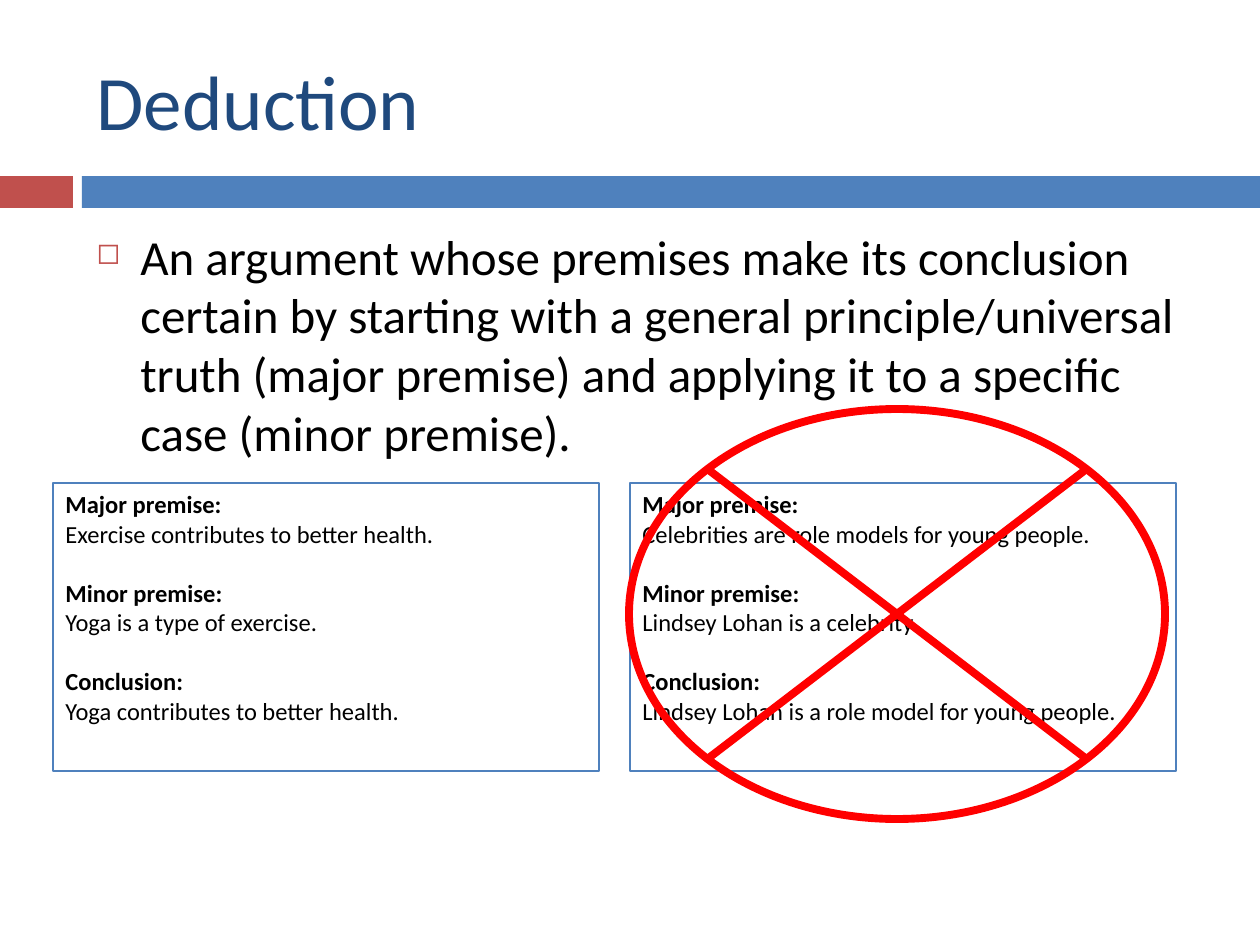
"""Build the slide on deduction with a sound and a rejected syllogism."""
from lxml import etree
from pptx import Presentation
from pptx import util as u
from pptx.dml.color import RGBColor
from pptx.enum import shapes, text
from pptx.oxml.ns import qn

EMU_PER_PX = 914400 / 126
FONT = "Calibri"
RED = RGBColor(0xC0, 0x50, 0x4D)
BLUE = RGBColor(0x4F, 0x81, 0xBD)
NAVY = RGBColor(0x1F, 0x49, 0x7D)
BLACK = RGBColor(0, 0, 0)
WHITE = RGBColor(0xFF, 0xFF, 0xFF)
ALERT = RGBColor(0xFF, 0, 0)

LABELS = ("Major premise:", "Minor premise:", "Conclusion:")
SYLLOGISMS = (
    ("Exercise contributes to better health.",
     "Yoga is a type of exercise.",
     "Yoga contributes to better health."),
    ("Celebrities are role models for young people.",
     "Lindsey Lohan is a celebrity.",
     "Lindsey Lohan is a role model for young people."),
)
DEFINITION = (
    "An argument whose premises make its conclusion certain by starting with "
    "a general principle/universal truth (major premise) and applying it to a "
    "specific case (minor premise)."
)


def px(length):
    return u.Emu(round(length * EMU_PER_PX))


def box(*lengths):
    return [px(length) for length in lengths]


def set_all(target, values):
    for name, value in values.items():
        setattr(target, name, value)


def write(paragraph, words, size, color, bold=False, **layout):
    run = paragraph.add_run()
    run.text = words
    set_all(run.font, {"name": FONT, "size": u.Pt(size), "bold": bold})
    run.font.color.rgb = color
    set_all(paragraph, {"alignment": text.PP_ALIGN.LEFT, **layout})


def add_shape(slide, kind, bounds, fill=None, line=None, width=1.5):
    shape = slide.shapes.add_shape(kind, *box(*bounds))
    shape.shadow.inherit = False
    if fill is None:
        shape.fill.background()
    else:
        shape.fill.solid()
        shape.fill.fore_color.rgb = fill
    if line is None:
        shape.line.fill.background()
    else:
        shape.line.color.rgb = line
        shape.line.width = u.Pt(width)
    return shape


def add_title(slide, words):
    title = slide.shapes.title
    set_all(title, dict(zip(("left", "top", "width", "height"), box(84, 32, 1124, 136))))
    set_all(title.text_frame, {"vertical_anchor": text.MSO_ANCHOR.MIDDLE, "word_wrap": True})
    write(title.text_frame.paragraphs[0], words, 44, NAVY)


def add_bullet(paragraph):
    properties = paragraph._p.get_or_add_pPr()
    indent = px(44)
    properties.set("marL", str(indent))
    properties.set("indent", str(-indent))
    color = etree.SubElement(properties, qn("a:buClr"))
    etree.SubElement(color, qn("a:srgbClr"), val=str(RED))
    etree.SubElement(properties, qn("a:buSzPct"), val="60000")
    etree.SubElement(properties, qn("a:buChar"), char="◻")


def add_definition(slide):
    frame = slide.shapes.add_textbox(*box(84, 220, 1124, 620)).text_frame
    frame.word_wrap = True
    paragraph = frame.paragraphs[0]
    write(paragraph, DEFINITION, 28, BLACK, space_before=u.Pt(7))
    add_bullet(paragraph)


def add_syllogism(slide, left, statements):
    shape = add_shape(slide, shapes.MSO_SHAPE.RECTANGLE, (left, 483, 546, 288), WHITE, BLUE)
    frame = shape.text_frame
    set_all(frame, {"vertical_anchor": text.MSO_ANCHOR.TOP, "word_wrap": True})
    for index, (label, statement) in enumerate(zip(LABELS, statements)):
        heading = frame.add_paragraph() if index else frame.paragraphs[0]
        write(heading, label, 14, BLACK, True, space_before=u.Pt(17 if index else 0))
        write(frame.add_paragraph(), statement, 14, BLACK)


def main():
    presentation = Presentation()
    set_all(presentation, {"slide_width": px(1260), "slide_height": px(945)})
    slide = presentation.slides.add_slide(presentation.slide_layouts[5])
    for left, width, color in ((0, 73, RED), (82, 1178, BLUE)):
        add_shape(slide, shapes.MSO_SHAPE.RECTANGLE, (left, 176, width, 32), color)
    add_title(slide, "Deduction")
    add_definition(slide)
    for left, statements in zip((53, 630), SYLLOGISMS):
        add_syllogism(slide, left, statements)
    add_shape(slide, shapes.MSO_SHAPE.FLOWCHART_SUMMING_JUNCTION,
              (629, 409, 536, 410), line=ALERT, width=4.5)
    presentation.save("out.pptx")


if __name__ == "__main__":
    main()
